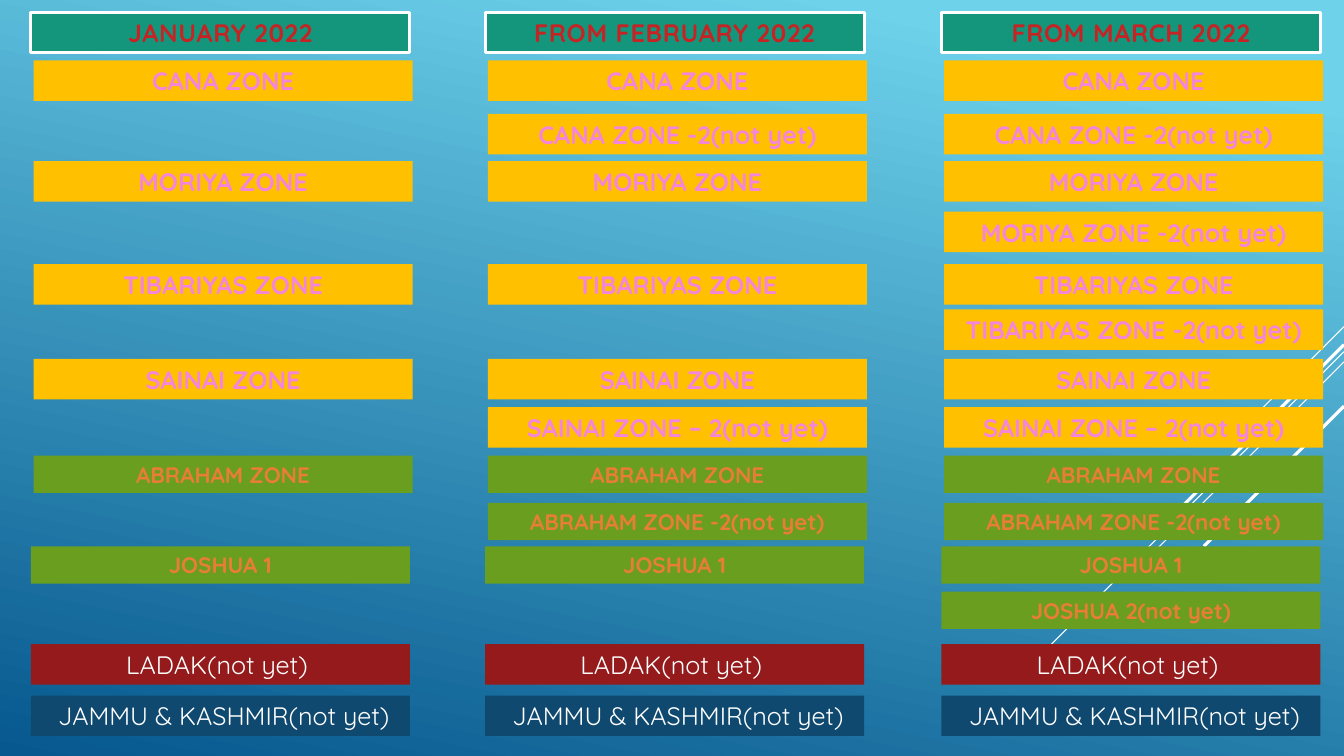
import pptx
import pptx.util
import pptx.dml.color
import pptx.enum.shapes
import pptx.enum.text
import pptx.oxml
import pptx.oxml.ns

Pt = pptx.util.Pt
RGBColor = pptx.dml.color.RGBColor
SKY, SEA = RGBColor(0x6E, 0xD2, 0xEB), RGBColor(0x06, 0x58, 0x8E)
WHITE, BLACK = RGBColor(0xFF, 0xFF, 0xFF), RGBColor(0, 0, 0)
TEAL, RED, NAVY = RGBColor(0x14, 0x96, 0x7C), RGBColor(0xC6, 0x23, 0x24), RGBColor(0x05, 0x2F, 0x61)
GOLD, PINK, PLUM = RGBColor(0xFF, 0xC0, 0x00), RGBColor(0xF5, 0x85, 0xDB), RGBColor(0xA5, 0x0E, 0x82)
GREEN, RUST = RGBColor(0x6A, 0x9E, 0x1F), RGBColor(0xE8, 0x7D, 0x37)
WINE, BLUE = RGBColor(0x94, 0x1A, 0x1B), RGBColor(0x0F, 0x49, 0x6F)

deck = pptx.Presentation()
deck.slide_width = pptx.util.Inches(13.33)
deck.slide_height = pptx.util.Inches(7.5)
slide = deck.slides.add_slide(deck.slide_layouts[6])

# One percent of the slide's width and height
col = deck.slide_width / 100
row = deck.slide_height / 100

back = slide.background.fill
back.gradient()
back.gradient_angle = 258
for stop, color, place in zip(back.gradient_stops, (SKY, SEA), (0.1, 1)):
    stop.color.rgb = color
    stop.position = place


def parse(xml):
    """Read an XML snippet that uses the a: prefix."""
    return pptx.oxml.parse_xml(xml.replace(" ", " " + pptx.oxml.ns.nsdecls("a") + " ", 1))


# Diagonal rays from the right edge: start and run in rows, width in points
RAYS = [(43.2, 13.33, 0.75), (46.53, 43.47, 0.75), (47.87, 27.6, 0.75),
        (45.6, 25.47, 2.25), (53.73, 18.53, 2.25)]
for start, run, width in RAYS:
    ray = slide.shapes.add_connector(
        pptx.enum.shapes.MSO_CONNECTOR.STRAIGHT,
        deck.slide_width, round(start * row),
        round(deck.slide_width - run * row), round((start + run) * row))
    ray.line.color.rgb = WHITE
    ray.line.width = Pt(width)
    ray._element.spPr.append(parse("<a:effectLst />"))

# Fill, text outline and its width, height in rows, font values
STYLES = {
    "head": (TEAL, NAVY, 0.75, 5.36, {"size": Pt(18), "bold": True}, RED),
    "gold": (GOLD, PLUM, 1.75, 5.36, {"size": Pt(18), "bold": True}, PINK),
    "green": (GREEN, BLACK, 0.75, 4.93, {"size": Pt(16), "bold": True}, RUST),
    "wine": (WINE, None, 0, 5.36, {"size": Pt(18), "bold": False}, WHITE),
    "blue": (BLUE, None, 0, 5.36, {"size": Pt(18), "bold": False}, WHITE),
}
FRAME = {"word_wrap": True, "vertical_anchor": pptx.enum.text.MSO_ANCHOR.MIDDLE,
         "auto_size": pptx.enum.text.MSO_AUTO_SIZE.SHAPE_TO_FIT_TEXT}

LEFTS = (2.3, 36.1, 70.05)
WIDE, INSET = 28.2, 0.2
MONTHS = ("JANUARY 2022", "FROM FEBRUARY 2022", "FROM MARCH 2022")

# Top in rows, style, inset, first month shown, text
ZONES = [
    (1.6, "head", 0, 0, None),
    (8, "gold", 1, 0, "CANA ZONE"),
    (15.07, "gold", 1, 1, "CANA ZONE -2(not yet)"),
    (21.33, "gold", 1, 0, "MORIYA ZONE"),
    (28, "gold", 1, 2, "MORIYA ZONE -2(not yet)"),
    (34.93, "gold", 1, 0, "TIBARIYAS ZONE"),
    (40.93, "gold", 1, 2, "TIBARIYAS ZONE -2(not yet)"),
    (47.47, "gold", 1, 0, "SAINAI ZONE"),
    (53.87, "gold", 1, 1, "SAINAI ZONE – 2(not yet)"),
    (60.27, "green", 1, 0, "ABRAHAM ZONE"),
    (66.53, "green", 1, 1, "ABRAHAM ZONE -2(not yet)"),
    (72.27, "green", 0, 0, "JOSHUA 1"),
    (78.27, "green", 0, 2, "JOSHUA 2(not yet)"),
    (85.2, "wine", 0, 0, "LADAK(not yet) "),
    (92, "blue", 0, 0, " JAMMU & KASHMIR(not yet)"),
]

for month, left in enumerate(LEFTS):
    for top, style, inset, first, text in ZONES:
        if month < first:
            continue
        fill, edge, thick, high, values, ink = STYLES[style]
        bar = slide.shapes.add_shape(
            pptx.enum.shapes.MSO_SHAPE.RECTANGLE,
            round((left + inset * INSET) * col), round(top * row),
            round(WIDE * col), round(high * row))
        bar.shadow.inherit = False
        bar.fill.solid()
        bar.fill.fore_color.rgb = fill
        bar.line.fill.background()
        for name, value in FRAME.items():
            setattr(bar.text_frame, name, value)
        para = bar.text_frame.paragraphs[0]
        para.alignment = pptx.enum.text.PP_ALIGN.CENTER
        run = para.add_run()
        run.text = text or MONTHS[month]
        run.font.name = "Quicksand"
        run.font.color.rgb = ink
        for name, value in values.items():
            setattr(run.font, name, value)
        props = run._r.get_or_add_rPr()
        if edge is not None:
            props.insert(0, parse(
                f'<a:ln w="{Pt(thick)}"><a:solidFill><a:srgbClr val="{edge}"/>'
                '</a:solidFill></a:ln>'))
        if style == "head":
            bar.line.color.rgb = WHITE
            bar.line.width = Pt(2.25)
            props.set("spc", "50")
            props.insert(2, parse(
                '<a:effectLst ><a:outerShdw blurRad="38100" dist="25400" dir="2700000">'
                '<a:srgbClr val="000000"><a:alpha val="40000"/></a:srgbClr>'
                '</a:outerShdw></a:effectLst>'))

deck.save("out.pptx")
